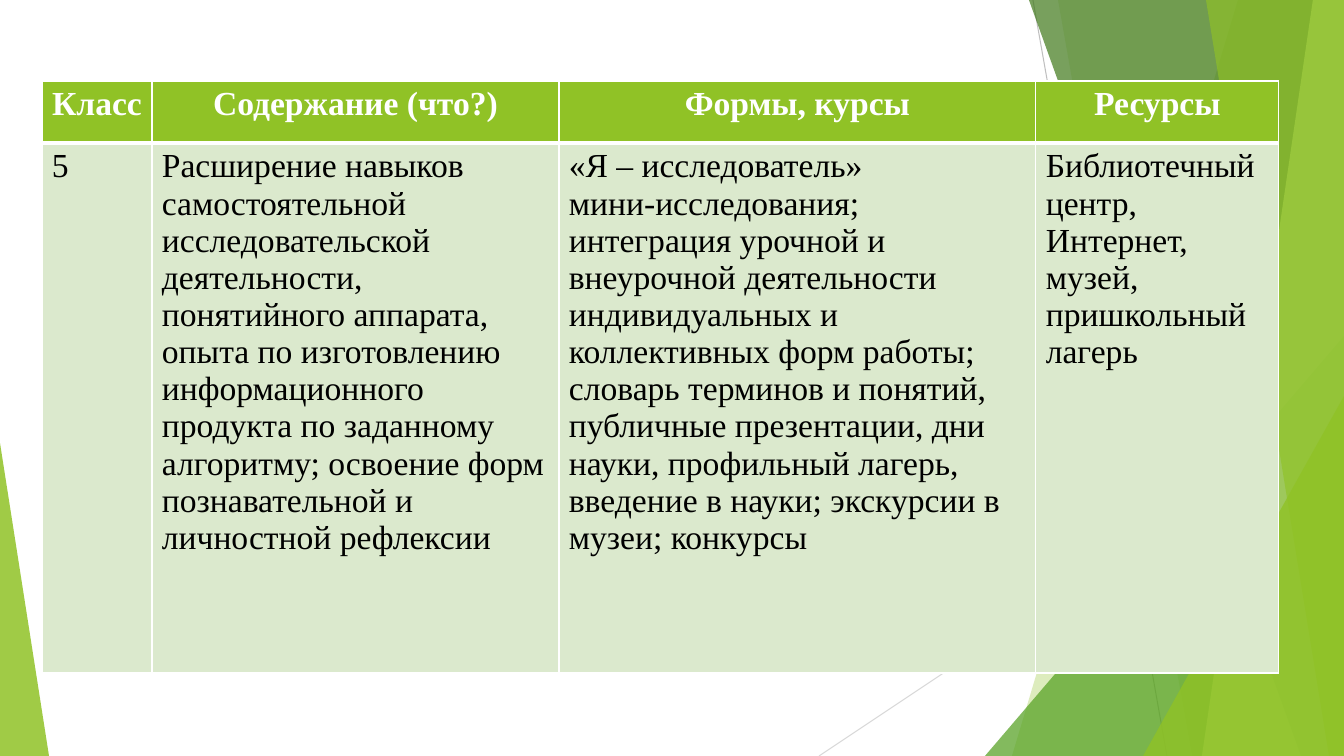
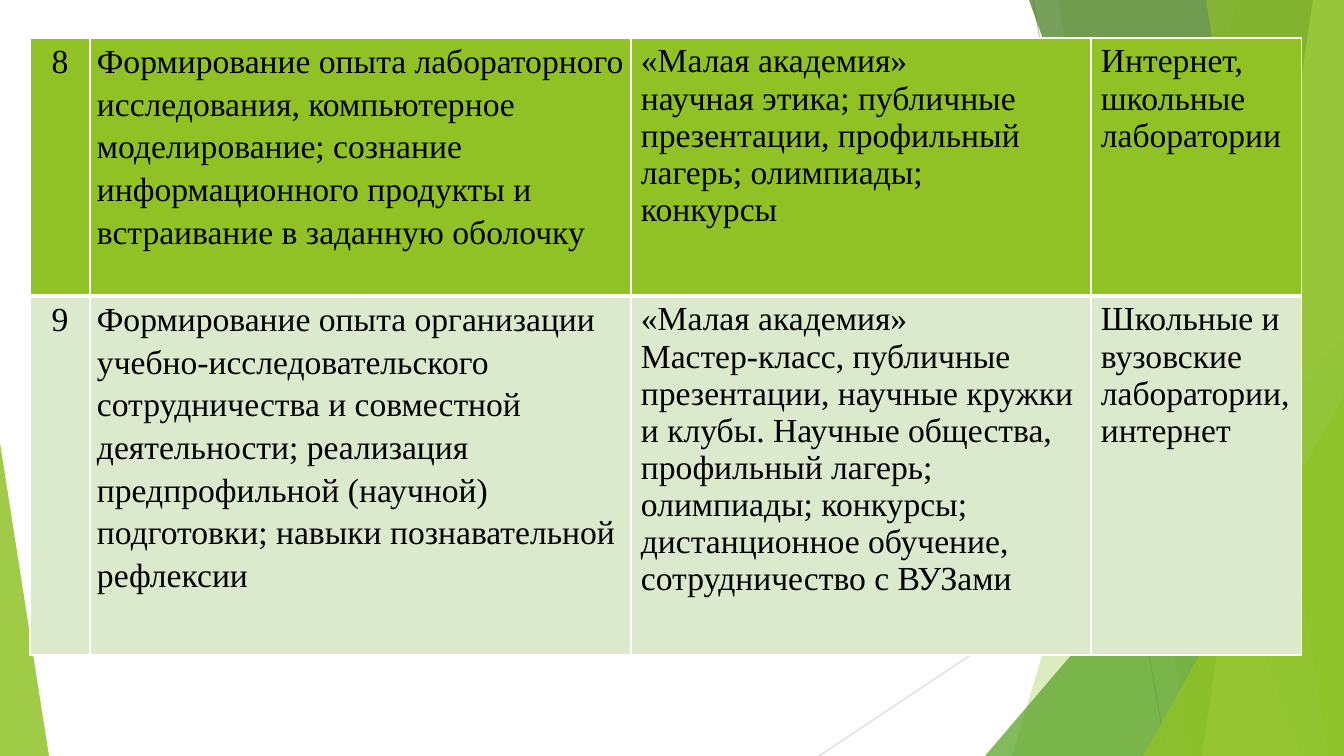
"""Build two slides with tables of school research activities by grade."""
import lxml.etree
import pptx
import pptx.dml.color
import pptx.enum.shapes
import pptx.enum.text
import pptx.oxml.ns
import pptx.util

EMU_PER_PX = 914400 / 100.8
WIDTH, HEIGHT = 1344, 756
GREEN, PALE, WHITE, BLACK = "90C226", "DBE9CD", "FFFFFF", "000000"
qn = pptx.oxml.ns.qn
rgb = pptx.dml.color.RGBColor.from_string
CENTER = pptx.enum.text.PP_ALIGN.CENTER
LEFT = pptx.enum.text.PP_ALIGN.LEFT


def px(*values):
    lengths = [pptx.util.Emu(round(value * EMU_PER_PX)) for value in values]
    return lengths if len(lengths) > 1 else lengths[0]


def paint(shape, color, opacity):
    shape.shadow.inherit = False
    shape.line.fill.background()
    shape.fill.solid()
    shape.fill.fore_color.rgb = rgb(color)
    tint = shape.element.spPr.find(".//" + qn("a:srgbClr"))
    lxml.etree.SubElement(tint, qn("a:alpha"), val=str(opacity * 1000))


deck = pptx.Presentation()
deck.slide_width, deck.slide_height = px(WIDTH, HEIGHT)
blank = deck.slide_layouts[6]
pages = [deck.slides.add_slide(blank) for number in range(2)]

shapes = pages[0].shapes
for ends, color in [((1033, 0, 1167, HEIGHT), "BFBFBF"), ((WIDTH, 406, 819, HEIGHT), "D9D9D9")]:
    line = shapes.add_connector(pptx.enum.shapes.MSO_CONNECTOR.STRAIGHT, *px(*ends))
    line.line.color.rgb = rgb(color)
    line.line.width = pptx.util.Pt(0.75)
    lxml.etree.SubElement(line.element.spPr, qn("a:effectLst"))

facets = [
    ("band", (1238, 1012), GREEN, 30),
    ("band", (1058, 1192), GREEN, 20),
    ("triangle", (985, 336, 359, 420, 1), "54A021", 72),
    ("band", (1029, 1301), "3F7819", 70),
    ("band", (1313, 1202), "C0E474", 70),
    ("band", (1206, 1329), GREEN, 65),
    ("triangle", (1143, 396, 201, 360, 1), GREEN, 80),
    ("triangle", (0, 443, 49, 313, 0), GREEN, 85),
]
for kind, geometry, color, opacity in facets:
    if kind == "band":
        top, bottom = geometry
        outline = shapes.build_freeform(top, 0, scale=EMU_PER_PX)
        outline.add_line_segments([(WIDTH, 0), (WIDTH, HEIGHT), (bottom, HEIGHT)], close=True)
        facet = outline.convert_to_shape()
    else:
        *frame, apex = geometry
        facet = shapes.add_shape(pptx.enum.shapes.MSO_SHAPE.ISOSCELES_TRIANGLE, *px(*frame))
        facet.adjustments[0] = apex
    paint(facet, color, opacity)

for shape in list(shapes):
    blank.shapes.element.append(shape.element)

heading = {"bold": True, "color": WHITE, "align": CENTER}
plain = {"bold": False, "color": BLACK, "align": LEFT}
spaced = plain | {"spacing": 1.15, "margins": (7, 0, 7, 0)}
grade = spaced | {"align": CENTER}

tables = [
    {
        "origin": (42, 81),
        "columns": (110, 407, 477, 243),
        "rows": (62, 530),
        "formats": [[heading] * 4, [plain] * 4],
        "texts": [
            ["Класс", "Содержание (что?)", "Формы, курсы", "Ресурсы"],
            [
                "5",
                "Расширение навыков самостоятельной исследовательской деятельности, "
                "понятийного аппарата, опыта по изготовлению информационного продукта "
                "по заданному алгоритму; освоение форм познавательной и личностной рефлексии",
                "«Я – исследователь»\n"
                "мини-исследования; интеграция урочной и внеурочной деятельности "
                "индивидуальных и коллективных форм работы; словарь терминов и понятий, "
                "публичные презентации, дни науки, профильный лагерь, введение в науки; "
                "экскурсии в музеи; конкурсы",
                "Библиотечный центр, Интернет, музей, пришкольный лагерь",
            ],
        ],
    },
    {
        "origin": (30, 38),
        "columns": (60, 541, 460, 211),
        "rows": (258, 359),
        "formats": [[grade, spaced, plain, plain]] * 2,
        "texts": [
            [
                "8",
                "Формирование опыта лабораторного исследования, компьютерное "
                "моделирование; сознание информационного продукты и встраивание "
                "в заданную оболочку",
                "«Малая академия»\n"
                "научная этика; публичные презентации, профильный лагерь; олимпиады;\n"
                "конкурсы",
                "Интернет, школьные лаборатории",
            ],
            [
                "9",
                "Формирование опыта организации учебно-исследовательского "
                "сотрудничества и совместной деятельности; реализация предпрофильной "
                "(научной) подготовки; навыки познавательной рефлексии",
                "«Малая академия»\n"
                "Мастер-класс, публичные презентации, научные кружки и клубы. Научные "
                "общества, профильный лагерь; олимпиады; конкурсы; дистанционное "
                "обучение, сотрудничество с ВУЗами",
                "Школьные и вузовские лаборатории, интернет",
            ],
        ],
    },
]
row_fills = (GREEN, PALE)
row_borders = ({"L": 1, "R": 1, "T": 1, "B": 3}, {"L": 1, "R": 1, "T": 3, "B": 1})
sides = ("margin_left", "margin_top", "margin_right", "margin_bottom")

for page, content in zip(pages, tables):
    columns, rows = content["columns"], content["rows"]
    size = (sum(columns), sum(rows))
    table = page.shapes.add_table(len(rows), len(columns), *px(*content["origin"], *size)).table
    table.first_row = table.horz_banding = False
    for column, width in zip(table.columns, columns):
        column.width = px(width)
    for row, height in zip(table.rows, rows):
        row.height = px(height)

    for row_index, texts in enumerate(content["texts"]):
        for column_index, text in enumerate(texts):
            cell = table.cell(row_index, column_index)
            style = content["formats"][row_index][column_index]
            for side, margin in zip(sides, style.get("margins", (10, 5, 10, 5))):
                setattr(cell, side, px(margin))
            properties = cell._tc.get_or_add_tcPr()
            for side, points in row_borders[row_index].items():
                border = lxml.etree.SubElement(
                    properties, qn("a:ln" + side), w=str(pptx.util.Pt(points)))
                solid = lxml.etree.SubElement(border, qn("a:solidFill"))
                lxml.etree.SubElement(solid, qn("a:srgbClr"), val=WHITE)
            cell.fill.solid()
            cell.fill.fore_color.rgb = rgb(row_fills[row_index])

            cell.text = text
            font_values = {
                "name": "Times New Roman", "size": pptx.util.Pt(24), "bold": style["bold"]}
            for para in cell.text_frame.paragraphs:
                para.alignment = style["align"]
                para.line_spacing = style.get("spacing", 1.0)
                for span in para.runs:
                    for name, value in font_values.items():
                        setattr(span.font, name, value)
                    span.font.color.rgb = rgb(style["color"])

deck.save("out.pptx")
